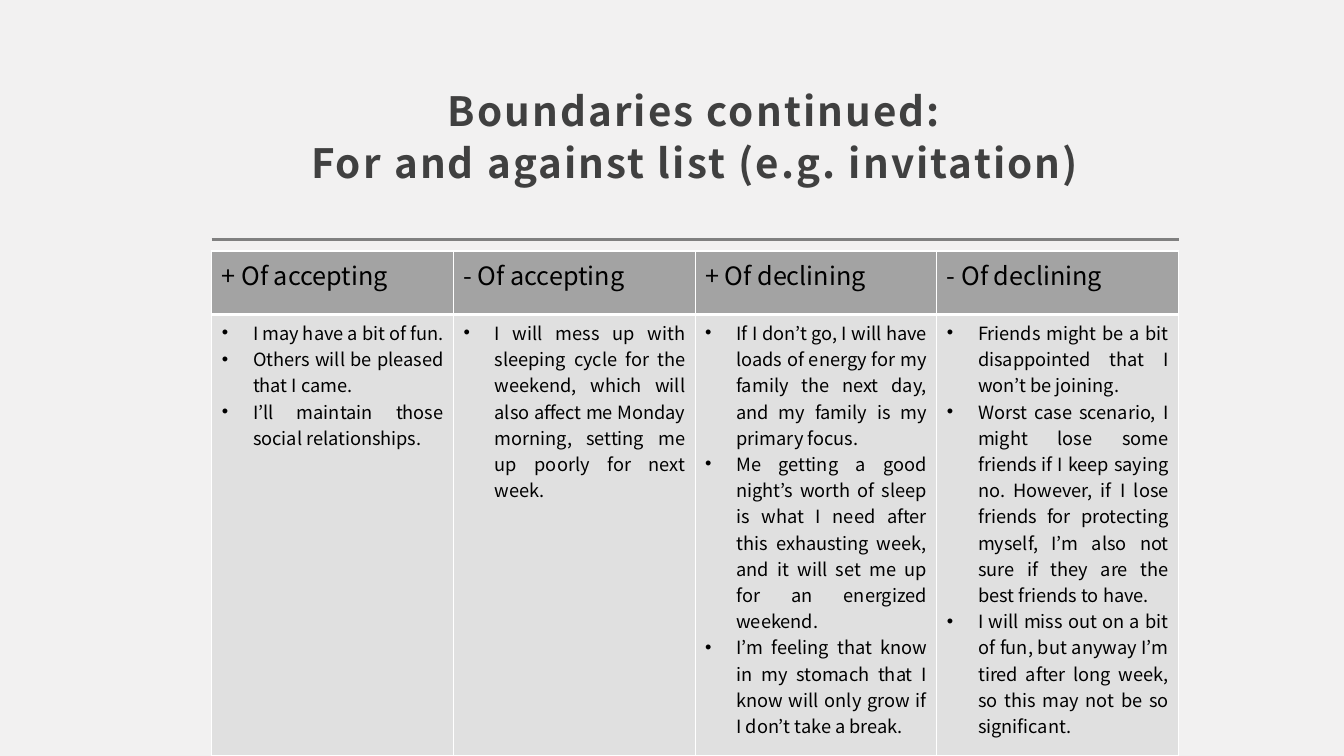
from lxml import etree
from pptx import Presentation
from pptx.dml.color import RGBColor
from pptx.enum.shapes import MSO_CONNECTOR as Connector
from pptx.enum.text import MSO_ANCHOR as Anchor, MSO_AUTO_SIZE as AutoSize, PP_ALIGN as Align
from pptx.oxml.ns import qn
from pptx.util import Inches, Pt

FONT = "Noto Sans CJK JP"
LEFT, WIDTH = 2.1, 9.59
ARGUMENTS = {
    "+ Of accepting": [
        "I may have a bit of fun.",
        "Others will be pleased that I came.",
        "I’ll maintain those social relationships.",
    ],
    "- Of accepting": [
        "I will mess up with sleeping cycle for the weekend, which will also affect me "
        "Monday morning, setting me up poorly for next week.",
    ],
    "+ Of declining": [
        "If I don’t go, I will have loads of energy for my family the next day, "
        "and my family is my primary focus.",
        "Me getting a good night’s worth of sleep is what I need after this exhausting "
        "week, and it will set me up for an energized weekend.",
        "I’m feeling that know in my stomach that I know will only grow if "
        "I don’t take a break.",
    ],
    "- Of declining": [
        "Friends might be a bit disappointed that I won’t be joining.",
        "Worst case scenario, I might lose some friends if I keep saying no. However, "
        "if I lose friends for protecting myself, I’m also not sure if they are the "
        "best friends to have.",
        "I will miss out on a bit of fun, but anyway I’m tired after long week, "
        "so this may not be so significant.",
    ],
}


def rgb(value):
    return RGBColor.from_string(value)


def style_cell(cell, fill, bottom_width):
    """Give a cell its fill and white borders; only the bottom width varies."""
    properties = cell._tc.get_or_add_tcPr()
    for side, points in (("lnL", 1), ("lnR", 1), ("lnT", 1), ("lnB", bottom_width)):
        border = etree.SubElement(properties, qn(f"a:{side}"), w=str(Pt(points)))
        solid = etree.SubElement(border, qn("a:solidFill"))
        etree.SubElement(solid, qn("a:srgbClr"), val="FFFFFF")
    cell.fill.solid()
    cell.fill.fore_color.rgb = rgb(fill)


deck = Presentation()
deck.slide_width, deck.slide_height = Inches(13.33), Inches(7.5)
page = deck.slides.add_slide(deck.slide_layouts[5])
page.background.fill.solid()
page.background.fill.fore_color.rgb = rgb("F2F1F1")

# Title
title = page.shapes.title
title.left, title.top = Inches(LEFT), Inches(0.48)
title.width, title.height = Inches(WIDTH), Inches(1.47)
frame = title.text_frame
frame.word_wrap = True
frame.auto_size = AutoSize.NONE
frame.vertical_anchor = Anchor.BOTTOM
frame.margin_left = frame.margin_right = frame.margin_top = Inches(0.12)
frame.margin_bottom = Inches(0.1)
frame.text = "Boundaries continued:\vFor and against list (e.g. invitation)"
para = frame.paragraphs[0]
para.alignment = Align.CENTER
para.line_spacing = 1.08
para.font.name, para.font.size, para.font.bold = FONT, Pt(28.8), True
para.font.color.rgb = rgb("404040")
para._p.pPr.find(qn("a:defRPr")).set("spc", "150")

# Rule under the title
rule = page.shapes.add_connector(
    Connector.STRAIGHT, Inches(LEFT), Inches(2.38), Inches(LEFT + WIDTH), Inches(2.38))
rule.line.color.rgb = rgb("808080")
rule.line.width = Pt(2)
etree.SubElement(rule._element.spPr, qn("a:effectLst"))

# For and against table
table = page.shapes.add_table(
    2, len(ARGUMENTS), Inches(LEFT), Inches(2.49), Inches(WIDTH), Inches(5.01)).table
table.rows[0].height, table.rows[1].height = Inches(0.63), Inches(4.38)

for column, (heading, points) in enumerate(ARGUMENTS.items()):
    head, body = table.cell(0, column), table.cell(1, column)
    style_cell(head, "A3A3A3", 3)
    style_cell(body, "E0E0E0", 1)
    head.text = heading
    body.text = "\n".join(points)
    for para in body.text_frame.paragraphs:
        para.alignment = Align.JUSTIFY
        layout = para._p.get_or_add_pPr()
        layout.set("marL", str(Inches(0.31)))
        layout.set("indent", str(Inches(-0.31)))
        etree.SubElement(layout, qn("a:buFont"), typeface="Arial")
        etree.SubElement(layout, qn("a:buChar"), char="•")
    for cell, size in ((head, 18), (body, 13)):
        for para in cell.text_frame.paragraphs:
            para.font.name, para.font.size, para.font.bold = FONT, Pt(size), False
            para.font.color.rgb = rgb("000000")

deck.save("out.pptx")
